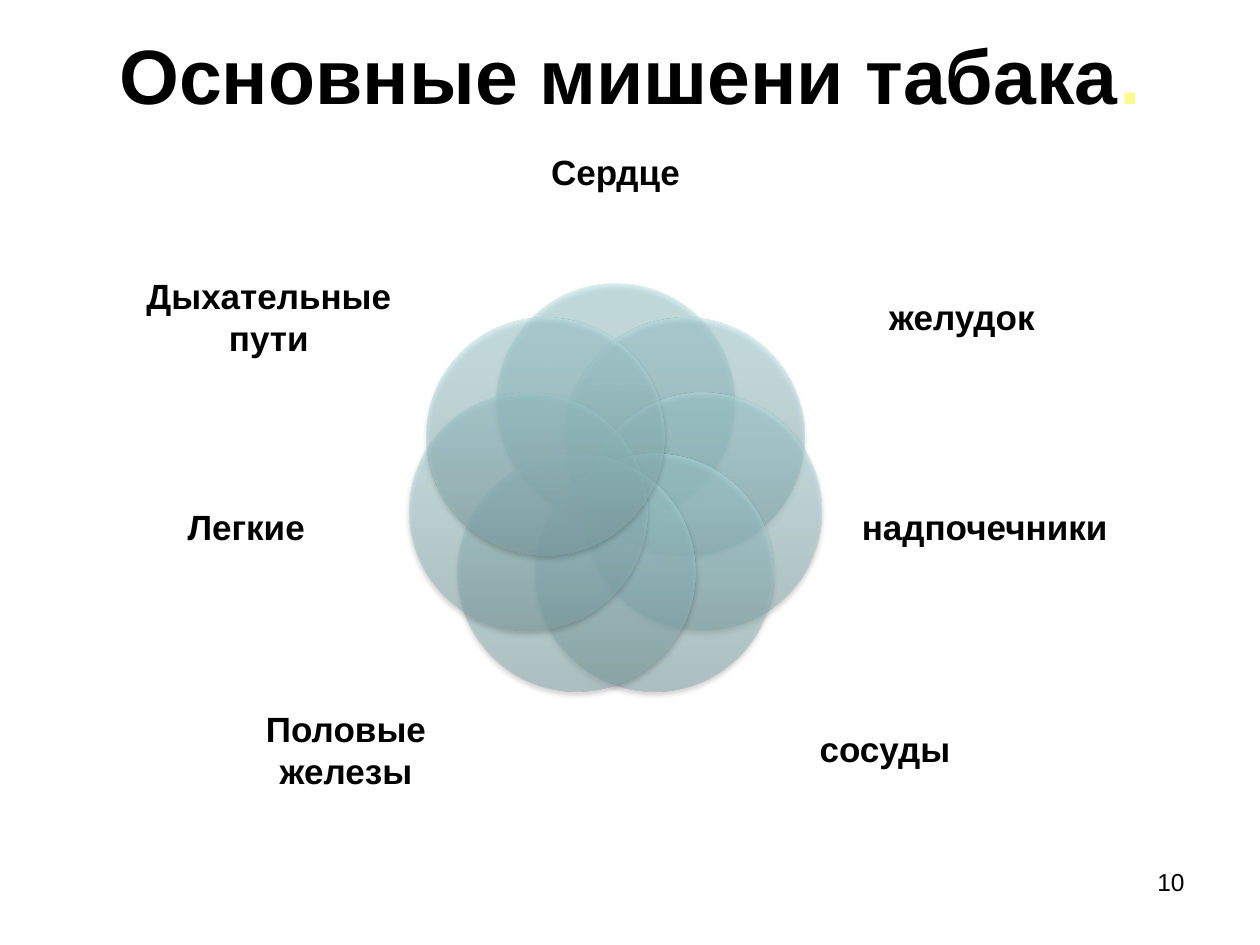
"""Build the slide on the main targets of tobacco: a ring of circles with labels."""
import math

from lxml import etree
from pptx import Presentation
from pptx.dml.color import RGBColor
from pptx.enum import shapes, text
from pptx.oxml import ns
from pptx.util import Pt

TITLE = [("Основные мишени табака", "000000"), (".", "FAFD8D")]
NUMBER = [("10", "000000")]
LABELS = [
    ("Сердце", 0, 98, 156, 84),
    ("желудок", 198, 181, 147, 92),
    ("надпочечники", 211, 301, 144, 98),
    ("сосуды", 154, 428, 156, 90),
    ("Половые железы", -154, 428, 156, 90),
    ("Легкие", -211, 301, 144, 98),
    ("Дыхательные пути", -198, 181, 147, 92),
]
STOPS = [(0, "87ABAE"), (80, "AFDEE2"), (100, "AFE0E4")]
CENTER_X, CENTER_Y, RING, SIZE = 351.7, 281.2, 51.1, 136


def rgb(value):
    """Return a colour from a hex string."""
    return RGBColor.from_string(value)


def sub(parent, tag, **attrs):
    """Append a drawing element with the given attributes."""
    return etree.SubElement(parent, ns.qn(tag), {k: str(v) for k, v in attrs.items()})


def translucent(parent, color, percent):
    """Append a colour with an opacity in percent."""
    sub(sub(parent, "a:srgbClr", val=color), "a:alpha", val=percent * 1000)


def add_text(slide, runs, box, size=20, bold=True, align=text.PP_ALIGN.CENTER,
             anchor=text.MSO_ANCHOR.MIDDLE, inset=(0, 0)):
    """Add a text box holding one paragraph of coloured runs."""
    tf = slide.shapes.add_textbox(*map(Pt, box)).text_frame
    tf.word_wrap = True
    tf.vertical_anchor = anchor
    tf.margin_left = tf.margin_right = Pt(inset[0])
    tf.margin_top = tf.margin_bottom = Pt(inset[1])
    p = tf.paragraphs[0]
    p.alignment = align
    for words, color in runs:
        r = p.add_run()
        r.text = words
        r.font.name, r.font.size, r.font.bold = "Arial", Pt(size), bold
        r.font.color.rgb = rgb(color)


def add_circle(slide, x, y):
    """Add a translucent gradient circle with a soft shadow around a centre."""
    s = slide.shapes.add_shape(shapes.MSO_SHAPE.OVAL, Pt(x - SIZE / 2), Pt(y - SIZE / 2),
                               Pt(SIZE), Pt(SIZE))
    s.line.fill.background()
    s.fill.gradient()
    s.fill.gradient_angle = 90
    s.shadow.inherit = False
    props = s._element.spPr
    stops = props.find(".//" + ns.qn("a:gsLst"))
    for old in list(stops):
        stops.remove(old)
    for pos, color in STOPS:
        translucent(sub(stops, "a:gs", pos=pos * 1000), color, 50)
    shadow = sub(props.find(ns.qn("a:effectLst")), "a:outerShdw", blurRad=Pt(3.1),
                 dist=Pt(1.8), dir=5400000, rotWithShape=0)
    translucent(shadow, "000000", 35)


def main():
    """Lay out the title, the ring of circles, the labels and the number."""
    prs = Presentation()
    prs.slide_width, prs.slide_height = Pt(720), Pt(540)
    slide = prs.slides.add_slide(prs.slide_layouts[6])
    add_text(slide, NUMBER, (516, 492, 168, 36), size=14, bold=False,
             align=text.PP_ALIGN.RIGHT, anchor=text.MSO_ANCHOR.TOP, inset=(7.2, 3.6))
    add_text(slide, TITLE, (36, 0, 648, 84), size=44, inset=(7.2, 3.6))
    for i, (label, dx, y, w, h) in enumerate(LABELS):
        angle = 2 * math.pi * i / len(LABELS)
        add_circle(slide, CENTER_X + RING * math.sin(angle), CENTER_Y - RING * math.cos(angle))
        add_text(slide, [(label, "000000")], (CENTER_X + dx - w / 2, y - h / 2, w, h))
    prs.save("out.pptx")


if __name__ == "__main__":
    main()
